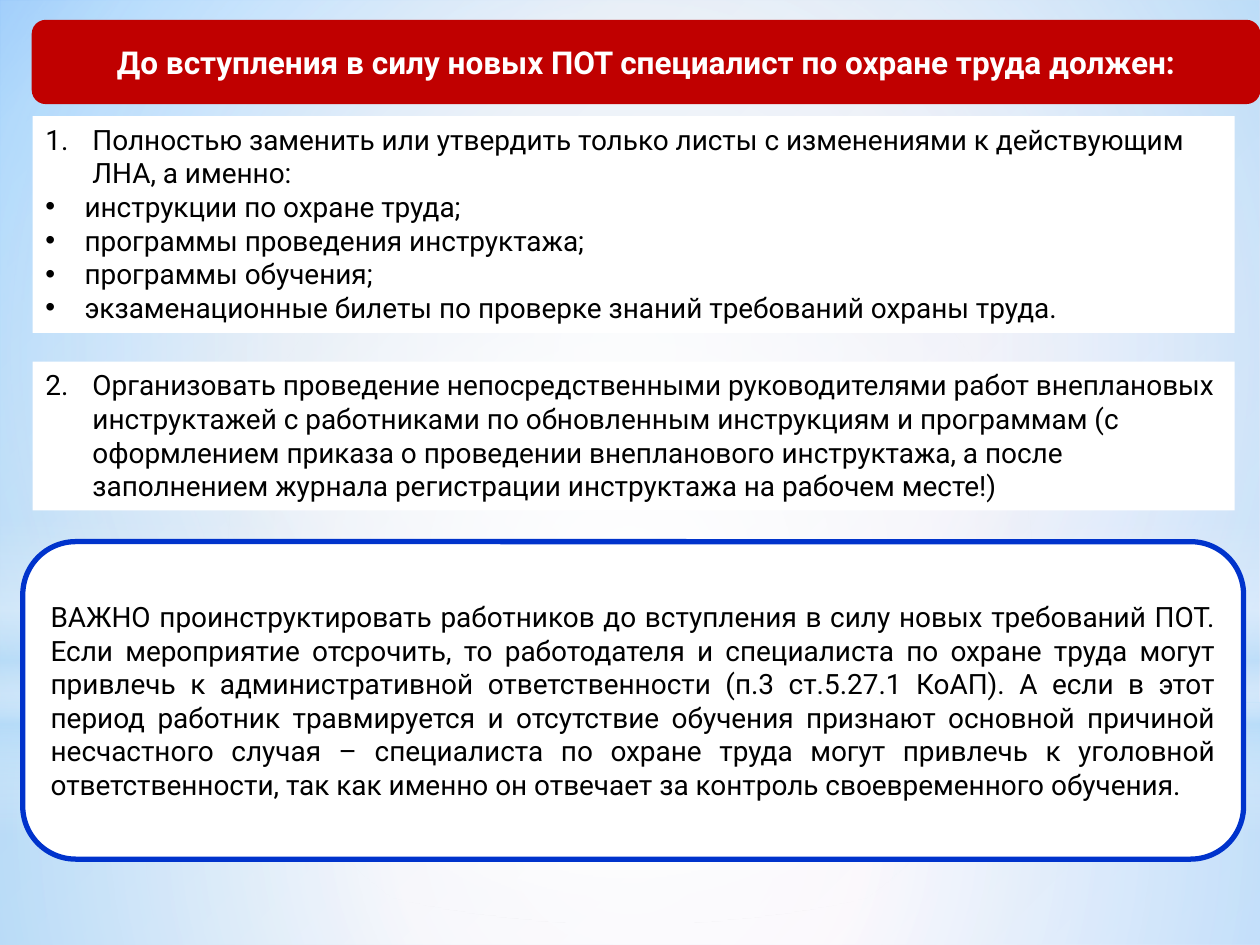
import lxml.etree
import pptx
import pptx.dml.color
import pptx.enum.shapes
import pptx.enum.text
import pptx.oxml
import pptx.oxml.ns
import pptx.util

Cm, Pt = pptx.util.Cm, pptx.util.Pt
RGBColor = pptx.dml.color.RGBColor
MSO_SHAPE = pptx.enum.shapes.MSO_SHAPE
PP_ALIGN = pptx.enum.text.PP_ALIGN
MSO_ANCHOR = pptx.enum.text.MSO_ANCHOR
qn = pptx.oxml.ns.qn

FONT = "Roboto"
WHITE = RGBColor(0xFF, 0xFF, 0xFF)
BLACK = RGBColor(0, 0, 0)
RED = RGBColor(0xC0, 0, 0)
BLUE = RGBColor(0, 0x33, 0xCC)
SKY = RGBColor(0xB4, 0xDC, 0xFA)
BACKDROP = [(0, RGBColor(0x5E, 0x9E, 0xFF), 100), (6, RGBColor(0x85, 0xC2, 0xFF), 100),
            (29, RGBColor(0xC4, 0xD6, 0xEB), 100), (100, RGBColor(0xFF, 0xEB, 0xFA), 100)]

# Background layers: shape, box in cm, stops (position, colour, opacity), angle or None for radial
LAYERS = [
    (MSO_SHAPE.RECTANGLE, (0, 14.17, 25.4, 4.88),
     [(0, WHITE, 91), (37, WHITE, 76), (100, SKY, 79)], None),
    (MSO_SHAPE.RECTANGLE, (0, 0, 25.4, 14.17),
     [(0, WHITE, 89), (48, WHITE, 62), (100, SKY, 79)], None),
    (MSO_SHAPE.RECTANGLE, (0, 10.46, 25.4, 6.35),
     [(0, WHITE, 0), (29, WHITE, 30), (45, SKY, 40), (55, WHITE, 26),
      (65, SKY, 60), (100, WHITE, 0)], 90),
    (MSO_SHAPE.OVAL, (0, 4.45, 25.4, 14.17), [(0, WHITE, 100), (56, WHITE, 0)], None),
]

TITLE = "До вступления в силу новых ПОТ специалист по охране труда должен:"
# List items: text, number (None for a bullet)
DOCUMENTS = [
    ("Полностью заменить или утвердить только листы с изменениями к действующим ЛНА, а именно:", 1),
    ("инструкции по охране труда;", None),
    ("программы проведения инструктажа;", None),
    ("программы обучения;", None),
    ("экзаменационные билеты по проверке знаний требований охраны труда.", None),
]
BRIEFINGS = [
    ("Организовать проведение непосредственными руководителями работ внеплановых инструктажей "
     "с работниками по обновленным инструкциям и программам (с оформлением приказа о проведении "
     "внепланового инструктажа, а после заполнением журнала регистрации инструктажа на рабочем "
     "месте!)", 2),
]
WARNING = (
    "ВАЖНО проинструктировать работников до вступления в силу новых требований ПОТ. Если "
    "мероприятие отсрочить, то работодателя и специалиста по охране труда могут привлечь к "
    "административной ответственности (п.3 ст.5.27.1 КоАП). А если в этот период работник "
    "травмируется и отсутствие обучения признают основной причиной несчастного случая – "
    "специалиста по охране труда могут привлечь к уголовной ответственности, так как именно он "
    "отвечает за контроль своевременного обучения.")


def set_gradient(fill, properties, stops, angle=None):
    """Swap the solid fill of the properties element for a gradient."""
    fill.solid()
    stop_xml = "".join(
        f'<a:gs pos="{position * 1000}"><a:srgbClr val="{color}">'
        f'<a:alpha val="{opacity * 1000}"/></a:srgbClr></a:gs>'
        for position, color, opacity in stops)
    if angle is None:
        direction = ('<a:path path="circle"><a:fillToRect l="50000" t="50000" '
                     'r="50000" b="50000"/></a:path>')
    else:
        direction = f'<a:lin ang="{angle * 60000}" scaled="0"/>'
    gradient = pptx.oxml.parse_xml(
        f'<a:gradFill {pptx.oxml.ns.nsdecls("a")} rotWithShape="1">'
        f'<a:gsLst>{stop_xml}</a:gsLst>{direction}</a:gradFill>')
    properties.replace(properties.find(qn("a:solidFill")), gradient)


def add_plain_shape(slide, kind, box):
    shape = slide.shapes.add_shape(kind, *map(Cm, box))
    shape.shadow.inherit = False
    shape.line.fill.background()
    return shape


def place_placeholder(placeholder, box):
    """Move a placeholder to the box and in front of the shapes so far."""
    placeholder.left, placeholder.top, placeholder.width, placeholder.height = map(Cm, box)
    placeholder.element.getparent().append(placeholder.element)
    placeholder.text_frame.word_wrap = True
    placeholder.text_frame.auto_size = pptx.enum.text.MSO_AUTO_SIZE.NONE


def format_paragraph(paragraph, size, color, alignment, bold=False):
    paragraph.alignment = alignment
    paragraph.space_before = Pt(0)
    font = paragraph.font
    font.name, font.size, font.bold = FONT, Pt(size), bold
    font.color.rgb = color


def set_list_mark(paragraph, number):
    properties = paragraph._p.get_or_add_pPr()
    indent = Cm(0.79) if number is None else Cm(0.95)
    properties.set("marL", str(indent))
    properties.set("indent", str(-indent))
    if number is None:
        lxml.etree.SubElement(properties, qn("a:buFont"), typeface="Arial")
        lxml.etree.SubElement(properties, qn("a:buChar"), char="•")
    else:
        lxml.etree.SubElement(properties, qn("a:buFont"), typeface=FONT)
        lxml.etree.SubElement(properties, qn("a:buAutoNum"),
                              type="arabicPeriod", startAt=str(number))


def draw_background(slide):
    background = slide.background
    background.fill.solid()
    set_gradient(background.fill, slide.element.find(".//" + qn("p:bgPr")), BACKDROP, 45)
    for kind, box, stops, angle in LAYERS:
        layer = add_plain_shape(slide, kind, box)
        set_gradient(layer.fill, layer.element.spPr, stops, angle)


def draw_title(slide, box):
    banner = add_plain_shape(slide, MSO_SHAPE.ROUNDED_RECTANGLE, box)
    banner.fill.solid()
    banner.fill.fore_color.rgb = RED
    title = slide.shapes.title
    place_placeholder(title, box)
    title.text_frame.text = TITLE
    title.text_frame.vertical_anchor = MSO_ANCHOR.MIDDLE
    format_paragraph(title.text_frame.paragraphs[0], 18, WHITE, PP_ALIGN.CENTER, bold=True)


def draw_list(placeholder, box, items):
    place_placeholder(placeholder, box)
    placeholder.fill.solid()
    placeholder.fill.fore_color.rgb = WHITE
    frame = placeholder.text_frame
    frame.text = "\n".join(text for text, number in items)
    for paragraph, (text, number) in zip(frame.paragraphs, items):
        paragraph.space_before = Pt(0)
        set_list_mark(paragraph, number)
        format_paragraph(paragraph, 16, BLACK, PP_ALIGN.LEFT)


def draw_warning(slide, box):
    warning = add_plain_shape(slide, MSO_SHAPE.ROUNDED_RECTANGLE, box)
    warning.fill.solid()
    warning.fill.fore_color.rgb = WHITE
    warning.line.color.rgb = BLUE
    warning.line.width = Pt(3)
    frame = warning.text_frame
    frame.word_wrap = True
    frame.vertical_anchor = MSO_ANCHOR.MIDDLE
    frame.text = WARNING
    format_paragraph(frame.paragraphs[0], 16, BLACK, PP_ALIGN.JUSTIFY)


def main():
    presentation = pptx.Presentation()
    presentation.slide_width, presentation.slide_height = Cm(25.4), Cm(19.05)
    # Layout with a title and two content placeholders
    slide = presentation.slides.add_slide(presentation.slide_layouts[3])
    draw_background(slide)
    draw_title(slide, (0.64, 0.4, 24.77, 1.7))
    draw_list(slide.placeholders[1], (0.66, 2.34, 24.23, 4.37), DOCUMENTS)
    draw_list(slide.placeholders[2], (0.66, 7.29, 24.23, 3), BRIEFINGS)
    draw_warning(slide, (0.46, 10.92, 24.61, 6.4))
    presentation.save("out.pptx")


if __name__ == "__main__":
    main()
